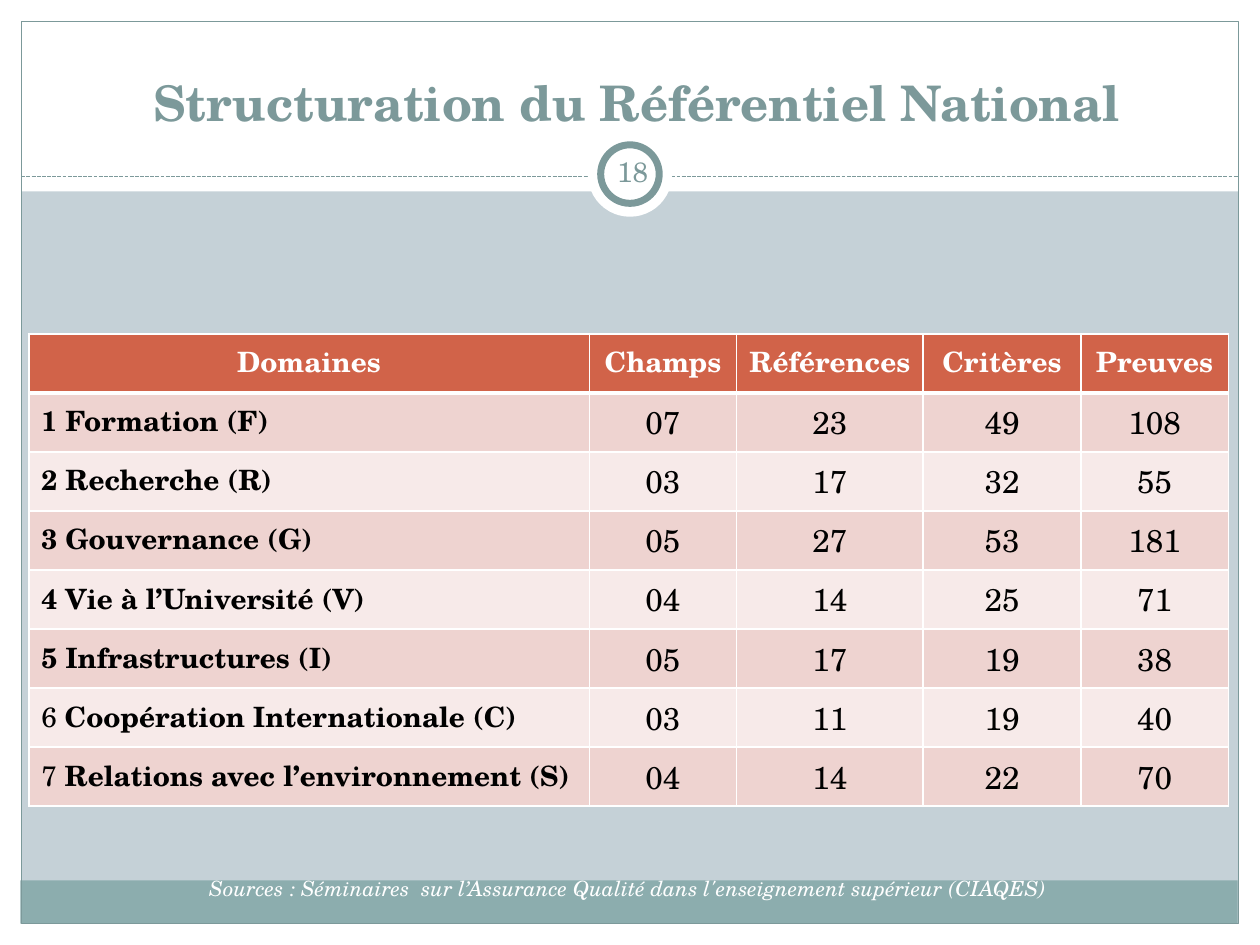
import lxml.etree
import pptx
import pptx.dml.color
import pptx.enum.dml
import pptx.enum.shapes
import pptx.enum.text
import pptx.oxml.ns
import pptx.util

Cm = pptx.util.Cm
Pt = pptx.util.Pt
SHAPE = pptx.enum.shapes.MSO_SHAPE
ALIGN = pptx.enum.text.PP_ALIGN
ANCHOR = pptx.enum.text.MSO_ANCHOR
FONT = "TeX Gyre Schola"
WHITE, TEAL, BLACK = "FFFFFF", "7C999A", "000000"
BANDS = ["EED3D0", "F7EAE9"]
COLUMN_WIDTHS = [11.3, 2.97, 3.76, 3.18, 2.97]
ROW_HEIGHT = 1.19
HEADINGS = ["Domaines", "Champs", "Références", "Critères", "Preuves"]
DOMAINS = [
    ("Formation (F)", "07", "23", "49", "108"),
    ("Recherche (R)", "03", "17", "32", "55"),
    ("Gouvernance (G)", "05", "27", "53", "181"),
    ("Vie à l’Université (V)", "04", "14", "25", "71"),
    ("Infrastructures (I)", "05", "17", "19", "38"),
    ("Coopération Internationale (C)", "03", "11", "19", "40"),
    ("Relations avec l’environnement (S)", "04", "14", "22", "70"),
]
FIRST_PLAIN_NUMBER = 6


def rgb(value):
    """Turn a hex string into a colour."""
    return pptx.dml.color.RGBColor.from_string(value)


def format_span(span, size, colour, bold=False, italic=False):
    """Set the font of one run."""
    span.font.name = FONT
    span.font.size = Pt(size)
    span.font.bold = bold
    span.font.italic = italic
    span.font.color.rgb = rgb(colour)


def write(frame, text, size, colour, align=ALIGN.CENTER, **style):
    """Fill a text frame with one formatted paragraph."""
    frame.text = text
    para = frame.paragraphs[0]
    para.alignment = align
    for span in para.runs:
        format_span(span, size, colour, **style)


def add_panel(page, kind, place, fill=None, line_width=None):
    """Add a preset shape with an optional fill and teal outline."""
    panel = page.shapes.add_shape(kind, *map(Cm, place))
    panel.shadow.inherit = False
    if fill:
        panel.fill.solid()
        panel.fill.fore_color.rgb = rgb(fill)
    else:
        panel.fill.background()
    if line_width:
        panel.line.color.rgb = rgb(TEAL)
        panel.line.width = Pt(line_width)
    else:
        panel.line.fill.background()


def add_divider(page, left, right, top):
    """Add the dashed rule below the title."""
    rule = page.shapes.add_connector(
        pptx.enum.shapes.MSO_CONNECTOR.STRAIGHT, Cm(left), Cm(top), Cm(right), Cm(top))
    rule.line.color.rgb = rgb(TEAL)
    rule.line.width = Pt(0.75)
    rule.line.dash_style = pptx.enum.dml.MSO_LINE.SQUARE_DOT
    lxml.etree.SubElement(rule.element.spPr, pptx.oxml.ns.qn("a:effectLst"))


def add_frame(page):
    """Add the white margins, bottom band, border, rule and number ring."""
    for place in [(0, 18.62, 25.4, 0.43), (0, 0, 25.4, 3.86),
                  (0, 0, 0.43, 19.05), (24.97, 0, 0.43, 19.05)]:
        add_panel(page, SHAPE.RECTANGLE, place, WHITE)
    add_panel(page, SHAPE.RECTANGLE, (0.41, 17.75, 24.54, 0.87), "8CADAE")
    add_panel(page, SHAPE.RECTANGLE, (0.43, 0.43, 24.54, 18.19), line_width=0.75)
    add_divider(page, 0.43, 24.97, 3.56)
    add_panel(page, SHAPE.OVAL, (11.85, 2.67, 1.7, 1.7), WHITE)
    add_panel(page, SHAPE.OVAL, (12.11, 2.92, 1.18, 1.18), WHITE, line_width=4)


def set_title(page, text):
    """Place the title in front of the frame and format it."""
    title = page.shapes.title
    title.element.getparent().append(title.element)
    title.left, title.top, title.width, title.height = map(Cm, (1.4, 0.99, 22.86, 1.78))
    title.text_frame.vertical_anchor = ANCHOR.BOTTOM
    write(title.text_frame, text, 28, TEAL, bold=True)


def add_label(page, place, text, size, colour, anchor=ANCHOR.TOP, inset=None, **style):
    """Add a wrapped, centred text box."""
    box = page.shapes.add_textbox(*map(Cm, place))
    frame = box.text_frame
    frame.word_wrap = True
    frame.vertical_anchor = anchor
    if inset is not None:
        frame.margin_left = frame.margin_right = Cm(inset)
        frame.margin_top = frame.margin_bottom = Cm(inset)
    write(frame, text, size, colour, **style)


def paint_cell(cell, fill, top=1, bottom=1):
    """Give a cell white borders and a fill."""
    properties = cell._tc.get_or_add_tcPr()
    for side, width in {"lnL": 1, "lnR": 1, "lnT": top, "lnB": bottom}.items():
        line = lxml.etree.SubElement(
            properties, pptx.oxml.ns.qn("a:" + side), w=str(Pt(width)))
        solid = lxml.etree.SubElement(line, pptx.oxml.ns.qn("a:solidFill"))
        lxml.etree.SubElement(solid, pptx.oxml.ns.qn("a:srgbClr"), val=WHITE)
    cell.fill.solid()
    cell.fill.fore_color.rgb = rgb(fill)


def write_domain(cell, number, name):
    """Write a numbered domain name into its cell."""
    para = cell.text_frame.paragraphs[0]
    for text, bold in [(f"{number} ", number < FIRST_PLAIN_NUMBER), (name, True)]:
        span = para.add_run()
        span.text = text
        format_span(span, 16, BLACK, bold=bold)


def add_domain_table(page):
    """Add the table of domains and their counts."""
    row_count = len(DOMAINS) + 1
    table = page.shapes.add_table(
        row_count, len(HEADINGS), Cm(0.58), Cm(6.73),
        Cm(sum(COLUMN_WIDTHS)), Cm(ROW_HEIGHT * row_count)).table
    for column, width in zip(table.columns, COLUMN_WIDTHS):
        column.width = Cm(width)
    for row in table.rows:
        row.height = Cm(ROW_HEIGHT)
    for index, heading in enumerate(HEADINGS):
        cell = table.cell(0, index)
        paint_cell(cell, "D16349", bottom=3)
        write(cell.text_frame, heading, 16, WHITE, bold=True)
    for number, (name, *counts) in enumerate(DOMAINS, 1):
        for index in range(len(HEADINGS)):
            paint_cell(table.cell(number, index), BANDS[(number - 1) % 2],
                       top=3 if number == 1 else 1)
        write_domain(table.cell(number, 0), number, name)
        for index, count in enumerate(counts, 1):
            write(table.cell(number, index).text_frame, count, 18, BLACK)


def main():
    """Build the slide and save it."""
    deck = pptx.Presentation()
    deck.slide_width, deck.slide_height = Cm(25.4), Cm(19.05)
    page = deck.slides.add_slide(deck.slide_layouts[5])
    page.background.fill.solid()
    page.background.fill.fore_color.rgb = rgb("C5D1D7")
    add_frame(page)
    set_title(page, "Structuration du Référentiel National")
    add_label(page, (0.71, 17.53, 23.9, 1.02),
              "Sources : Séminaires  sur l’Assurance Qualité dans l'enseignement supérieur (CIAQES)",
              12, WHITE, italic=True)
    add_label(page, (12.12, 2.84, 1.27, 1.22), "18", 16, TEAL, ANCHOR.MIDDLE, 0.13)
    add_domain_table(page)
    deck.save("out.pptx")


if __name__ == "__main__":
    main()
